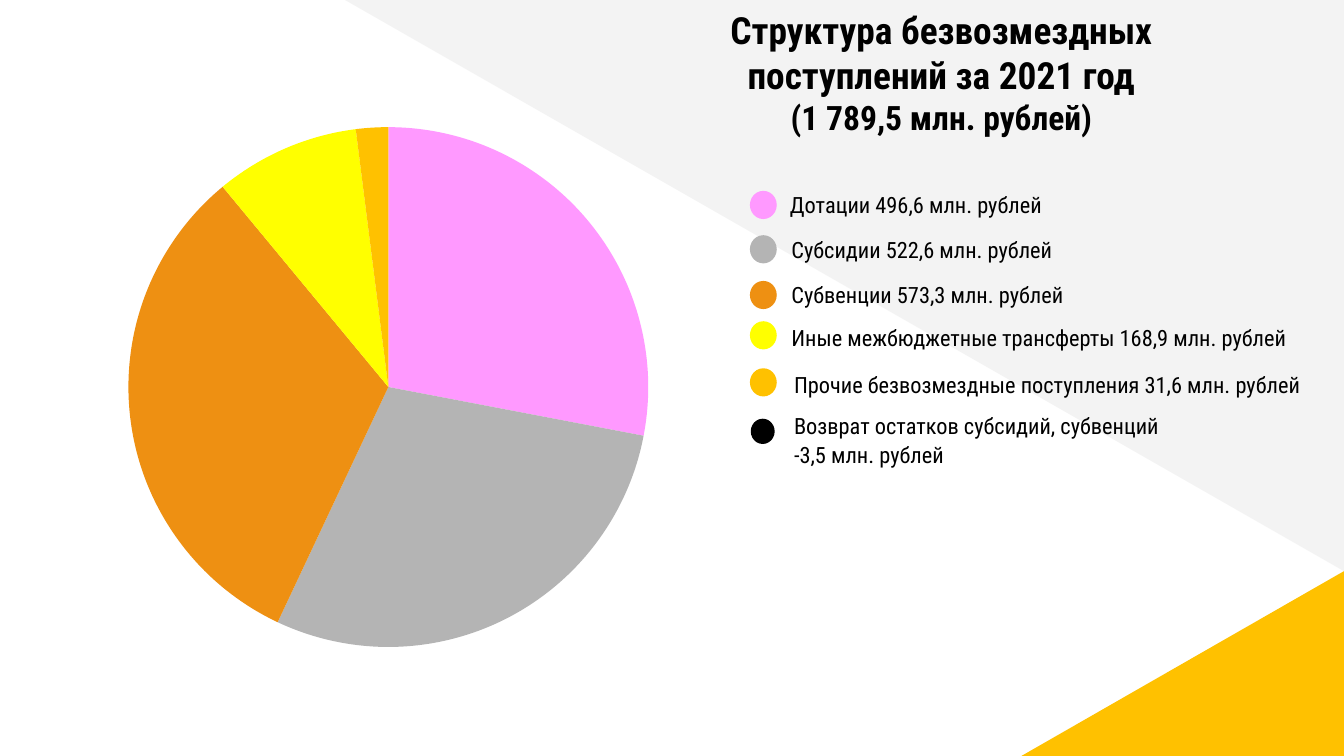
from lxml.etree import SubElement as Sub
from pptx import Presentation
from pptx.chart.data import CategoryChartData as Data
from pptx.dml.color import RGBColor as RGB
from pptx.enum.chart import XL_CHART_TYPE as Chart
from pptx.enum.shapes import MSO_SHAPE as Kind
from pptx.enum.text import MSO_ANCHOR as Anchor, PP_ALIGN as Align
from pptx.oxml.ns import qn
from pptx.util import Inches, Pt

BLACK = RGB(0x00, 0x00, 0x00)
PALE = RGB(0xF3, 0xF3, 0xF3)
GOLD = RGB(0xFF, 0xC1, 0x00)
PINK = RGB(0xFF, 0x99, 0xFF)
GREY = RGB(0xB4, 0xB4, 0xB4)
ORANGE = RGB(0xEE, 0x90, 0x12)
YELLOW = RGB(0xFF, 0xFF, 0x00)
FONT = "Roboto Condensed"

deck = Presentation()
deck.slide_width, deck.slide_height = Inches(10), Inches(5.625)
slide = deck.slides.add_slide(deck.slide_layouts[5])
shapes = slide.shapes
col = row = deck.slide_width / 100


def box(x, y, w, h):
    return int(x * col), int(y * row), int(w * col), int(h * row)


def draw(kind, color, *area):
    shape = shapes.add_shape(kind, *box(*area))
    shape.shadow.inherit = False
    shape.fill.solid()
    shape.fill.fore_color.rgb = color
    shape.line.fill.background()
    return shape


wedge = draw(Kind.RIGHT_TRIANGLE, PALE, 25.5, -0.1, 74.5, 42.6)
wedge.rotation = 180
corner = draw(Kind.RIGHT_TRIANGLE, GOLD, 76, 42.5, 24, 13.75)
corner._element.spPr.find(qn("a:xfrm")).set("flipH", "1")

title = shapes.title
shapes._spTree.append(title._element)
title.left, title.top, title.width, title.height = box(39.5, -0.45, 61.1, 6.3)
frame = title.text_frame
frame.word_wrap = True
frame.vertical_anchor = Anchor.TOP
frame.margin_left = frame.margin_right = int(col)
frame.margin_top = frame.margin_bottom = int(row)
para = frame.paragraphs[0]
para.alignment = Align.CENTER
heads = [
    ("Структура безвозмездных", 20),
    ("поступлений за 2021 год", 20),
    ("(1 789,5 млн. рублей)", 18),
]
for i, (words, size) in enumerate(heads):
    if i:
        para.add_line_break()
    run = para.add_run()
    run.text = words
    run.font.name, run.font.size, run.font.bold = FONT, Pt(size), True
    run.font.color.rgb = BLACK

items = [
    (28, PINK, 57.8, 13.2, 14.2, ["Дотации 496,6 млн. рублей"]),
    (29, GREY, 57.9, 16.6, 17.5, ["Субсидии 522,6 млн. рублей"]),
    (32, ORANGE, 57.9, 19.9, 20.9, ["Субвенции 573,3 млн. рублей"]),
    (9, YELLOW, 57.9, 23.1, 23.9,
     ["Иные межбюджетные трансферты 168,9 млн. рублей"]),
    (2, GOLD, 58.1, 26.6, 27.4,
     ["Прочие безвозмездные поступления 31,6 млн. рублей"]),
    (0, BLACK, 58.1, 29.7, 31.3,
     ["Возврат остатков субсидий, субвенций", "-3,5 млн. рублей"]),
]

data = Data()
data.categories = [str(i + 1) for i in range(len(items))]
data.add_series("Series 1", [item[0] for item in items])
chart = shapes.add_chart(Chart.PIE, *box(1.7, 7.8, 54.4, 41.6), data).chart
chart.has_title = chart.has_legend = False
chart.font.name, chart.font.size = "Arial", Pt(10)
chart.font.color.rgb = BLACK
pie = chart.plots[0]
pie.vary_by_categories = True

area = chart._chartSpace.chart.plotArea
for old in area.findall(qn("c:layout")):
    area.remove(old)
layout = Sub(area, qn("c:layout"))
area.insert(0, layout)
manual = Sub(layout, qn("c:manualLayout"))
for tag, val in [("layoutTarget", "inner"), ("xMode", "edge"), ("yMode", "edge"),
                 ("x", "0.14"), ("y", "0.04"), ("w", "0.72"), ("h", "0.93")]:
    Sub(manual, qn("c:" + tag)).set("val", val)

for i, (share, color, left, top, mark, lines) in enumerate(items):
    style = pie.series[0].points[i].format
    style.fill.solid()
    style.fill.fore_color.rgb = color

    if color == BLACK:
        dot = draw(Kind.OVAL, color, 56, mark, 1.5, 1.6)
        for line in (dot.line, style.line):
            line.color.rgb, line.width = BLACK, Pt(2)
    else:
        draw(Kind.OVAL, color, 55.8, mark, 2, 2.1)

    label = shapes.add_textbox(*box(left, top, 42, 2.1 + 2.1 * len(lines)))
    frame = label.text_frame
    frame.word_wrap = True
    frame.margin_left = frame.margin_right = int(col)
    frame.margin_top = frame.margin_bottom = int(row)
    for n, words in enumerate(lines):
        para = frame.add_paragraph() if n else frame.paragraphs[0]
        if n:
            para.space_before = Pt(1)
        run = para.add_run()
        run.text = words
        run.font.name, run.font.size = FONT, Pt(12)
        run.font.color.rgb = BLACK

deck.save("out.pptx")
